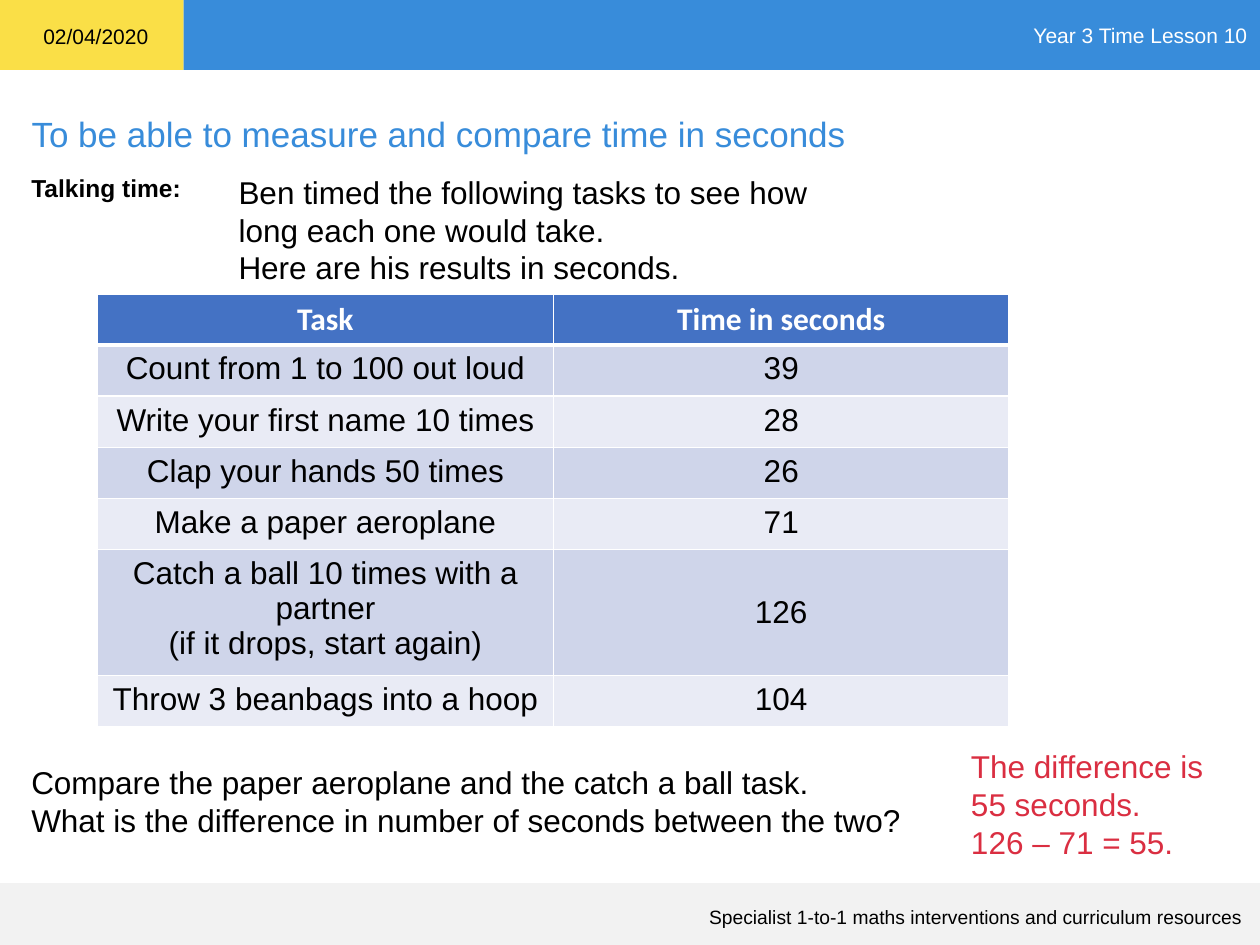
from lxml import etree
from pptx import Presentation
from pptx.dml.color import RGBColor
from pptx.enum.shapes import MSO_SHAPE
from pptx.enum.text import MSO_ANCHOR, MSO_AUTO_SIZE, PP_ALIGN
from pptx.oxml.ns import qn
from pptx.util import Pt

LEFT, CENTER, RIGHT = PP_ALIGN.LEFT, PP_ALIGN.CENTER, PP_ALIGN.RIGHT
TOP, MIDDLE = MSO_ANCHOR.TOP, MSO_ANCHOR.MIDDLE
RECTANGLE = MSO_SHAPE.RECTANGLE
NO_AUTOFIT = MSO_AUTO_SIZE.NONE

BLACK = RGBColor(0x00, 0x00, 0x00)
WHITE = RGBColor(0xFF, 0xFF, 0xFF)
YELLOW = RGBColor(0xFA, 0xDF, 0x47)
BLUE = RGBColor(0x38, 0x8C, 0xDA)
RED = RGBColor(0xDA, 0x2E, 0x41)
GREY = RGBColor(0xF2, 0xF2, 0xF2)
HEADER_BLUE = RGBColor(0x44, 0x72, 0xC4)
BANDS = [RGBColor(0xE9, 0xEB, 0xF5), RGBColor(0xCF, 0xD5, 0xEA)]


def write(frame, lines, size, color, align=LEFT, name="Arial", bold=False):
    look = {"size": Pt(size), "name": name, "bold": bold}
    for index, line in enumerate(lines):
        para = frame.paragraphs[0] if index == 0 else frame.add_paragraph()
        para.alignment = align
        span = para.add_run()
        span.text = line
        for key, value in look.items():
            setattr(span.font, key, value)
        span.font.color.rgb = color


def add_border(cell, side, width):
    line = etree.SubElement(cell._tc.get_or_add_tcPr(), qn(f"a:{side}"), w=str(Pt(width)))
    fill = etree.SubElement(line, qn("a:solidFill"))
    etree.SubElement(fill, qn("a:srgbClr"), val=str(WHITE))


deck = Presentation()
deck.slide_width, deck.slide_height = Pt(720), Pt(540)
page = deck.slides.add_slide(deck.slide_layouts[5])

bars = [
    (0, 0, 105, 40, YELLOW, []),
    (105, 0, 615, 40, BLUE, ["Year 3 Time Lesson 10"]),
    (0, 504.7, 720, 35.3, GREY, []),
]
for left, top, width, height, color, lines in bars:
    bar = page.shapes.add_shape(RECTANGLE, Pt(left), Pt(top), Pt(width), Pt(height))
    bar.shadow.inherit = False
    bar.fill.solid()
    bar.fill.fore_color.rgb = color
    bar.line.fill.background()
    bar.text_frame.vertical_anchor = MIDDLE
    write(bar.text_frame, lines, 12, WHITE, RIGHT)

title = page.shapes.title
title.left, title.top, title.width, title.height = Pt(10.8), Pt(60.5), Pt(699), Pt(31.5)
title.text_frame.vertical_anchor = TOP
title.text_frame.auto_size = NO_AUTOFIT
write(title.text_frame, ["To be able to measure and compare time in seconds"], 20, BLUE)

texts = [
    (17.7, 9.6, 75, 21.8, True, ["02/04/2020"],
     {"size": 12, "color": BLACK}),
    (10.8, 95.2, 100, 24.2, True, ["Talking time:"],
     {"size": 14, "color": BLACK, "bold": True}),
    (129.2, 95.2, 373, 72.7, True,
     ["Ben timed the following tasks to see how long each one would take.",
      "Here are his results in seconds."],
     {"size": 18, "color": BLACK}),
    (10.8, 432.5, 543, 50.9, True,
     ["Compare the paper aeroplane and the catch a ball task.",
      "What is the difference in number of seconds between the two?"],
     {"size": 18, "color": BLACK}),
    (547.8, 423.3, 163, 72.7, True,
     ["The difference is", "55 seconds.", "126 – 71 = 55."],
     {"size": 18, "color": RED}),
    (30.2, 514, 687, 20, True,
     ["Specialist 1-to-1 maths interventions and curriculum resources"],
     {"size": 11, "color": BLACK, "align": RIGHT}),
]
for left, top, width, height, wrap, lines, look in texts:
    box = page.shapes.add_textbox(Pt(left), Pt(top), Pt(width), Pt(height))
    box.text_frame.word_wrap = wrap
    write(box.text_frame, lines, **look)

results = [
    (["Task"], "Time in seconds"),
    (["Count from 1 to 100 out loud"], "39"),
    (["Write your first name 10 times"], "28"),
    (["Clap your hands 50 times"], "26"),
    (["Make a paper aeroplane"], "71"),
    (["Catch a ball 10 times with a partner", "(if it drops, start again)"], "126"),
    (["Throw 3 beanbags into a hoop"], "104"),
]
ROW_HEIGHT, TALL_ROW_HEIGHT = 29.2, 72
table = page.shapes.add_table(
    len(results), 2, Pt(55.7), Pt(168), Pt(521), Pt(6 * ROW_HEIGHT + TALL_ROW_HEIGHT)).table
for column in table.columns:
    column.width = Pt(260.5)
for row, (task, seconds) in enumerate(results):
    table.rows[row].height = Pt(TALL_ROW_HEIGHT if len(task) > 1 else ROW_HEIGHT)
    header = row == 0
    for column, lines in enumerate([task, [seconds]]):
        cell = table.cell(row, column)
        borders = {"lnL": 1, "lnR": 1, "lnT": 3 if row == 1 else 1, "lnB": 3 if header else 1}
        for side, width in borders.items():
            add_border(cell, side, width)
        cell.fill.solid()
        cell.fill.fore_color.rgb = HEADER_BLUE if header else BANDS[row % 2]
        cell.vertical_anchor = MIDDLE if len(task) > 1 and column == 1 else TOP
        write(cell.text_frame, lines, 18, WHITE if header else BLACK, CENTER,
              "Calibri" if header else "Arial", header)

deck.save("out.pptx")
